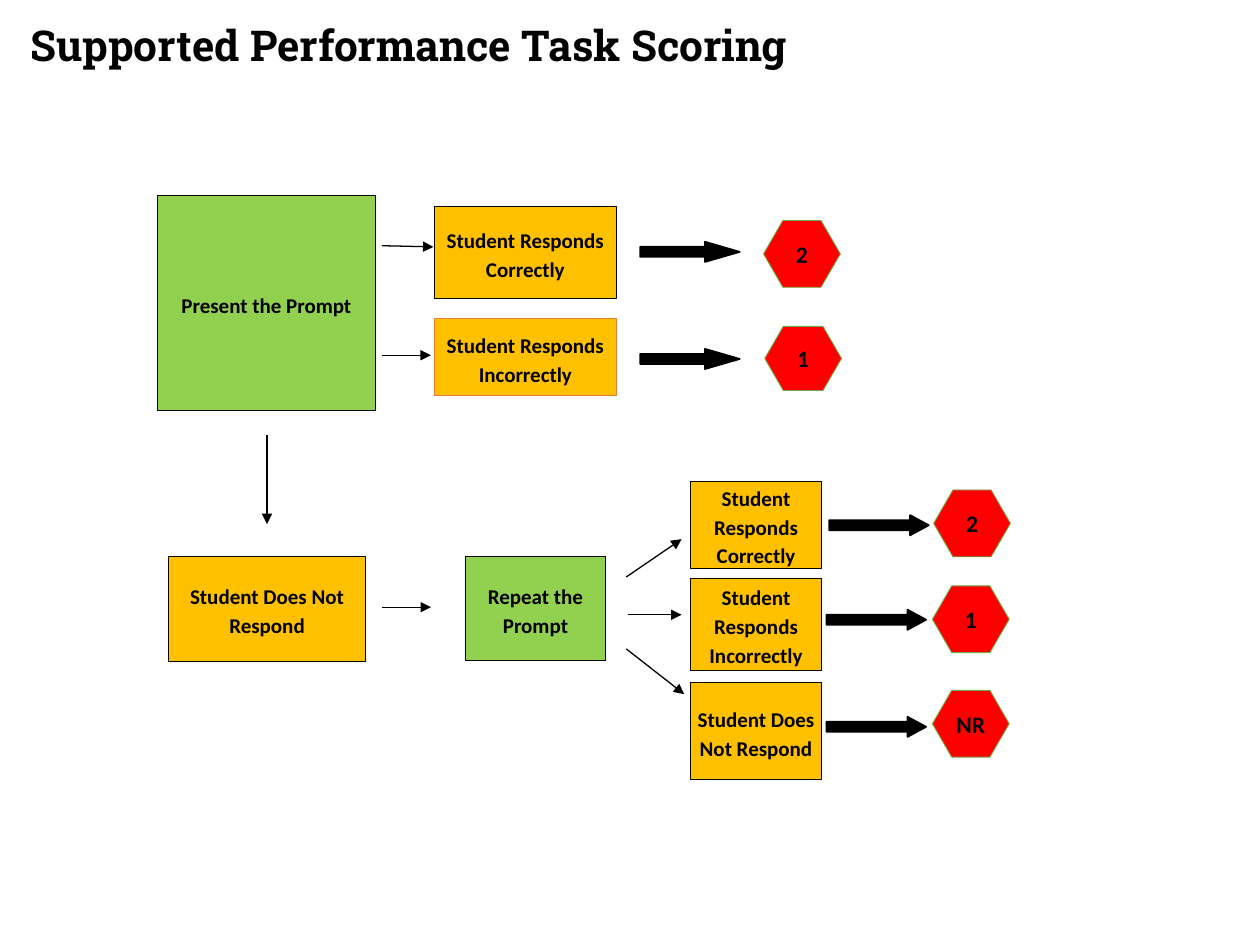
import pptx
import pptx.util
import pptx.dml.color
import pptx.enum.shapes
import pptx.enum.text
import pptx.oxml
import pptx.oxml.ns

Pt = pptx.util.Pt
KIND = pptx.enum.shapes.MSO_SHAPE
ALIGN = pptx.enum.text.PP_ALIGN
MIDDLE = pptx.enum.text.MSO_ANCHOR.MIDDLE
BLACK, GREEN, AMBER, RED = "000000", "92D050", "FFC000", "FF0000"
LEAF, RUST = "70AD47", "ED7D31"


def color(code):
    """Turn a hex string into a colour."""
    return pptx.dml.color.RGBColor.from_string(code)


def write(shape, text, face, size, pad, align, space):
    """Put one bold black paragraph in the middle of a shape."""
    frame = shape.text_frame
    frame.text = text
    frame.word_wrap = True
    frame.vertical_anchor = MIDDLE
    frame.margin_left = frame.margin_right = Pt(pad[0])
    frame.margin_top = frame.margin_bottom = Pt(pad[1])
    para = frame.paragraphs[0]
    para.alignment = align
    para.line_spacing = space
    font = para.runs[0].font
    font.name, font.size, font.bold = face, Pt(size), True
    font.color.rgb = color(BLACK)


def draw(slide, kind, box, fill, edge, width):
    """Add a filled and outlined shape without a shadow."""
    shape = slide.shapes.add_shape(kind, *[Pt(n) for n in box])
    shape.shadow.inherit = False
    shape.fill.solid()
    shape.fill.fore_color.rgb = color(fill)
    shape.line.color.rgb = color(edge)
    shape.line.width = Pt(width)
    return shape


def step(slide, box, text, fill, edge=BLACK):
    """Add a rectangle for one step of the task."""
    shape = draw(slide, KIND.RECTANGLE, box, fill, edge, 0.5)
    write(shape, text, "Calibri", 12, (3.6, 2.16), ALIGN.CENTER, 1.15)


def score(slide, box, text):
    """Add a red hexagon with a score."""
    shape = draw(slide, KIND.HEXAGON, box, RED, LEAF, 0.5)
    shape.adjustments[0] = 0.289
    write(shape, text, "Calibri", 13.5, (0, 0), ALIGN.CENTER, 1)


def block(slide, left, top, head):
    """Add a thick arrow that leads to a score."""
    shape = draw(slide, KIND.RIGHT_ARROW, (left, top, 56.9, 11.5), BLACK, BLACK, 1)
    shape.adjustments[1] = head


def arrow(slide, left, top, ends):
    """Add a thin arrow between two points."""
    x1, y1, x2, y2 = ends
    line = slide.shapes.add_connector(
        pptx.enum.shapes.MSO_CONNECTOR.STRAIGHT,
        Pt(left + x1), Pt(top + y1), Pt(left + x2), Pt(top + y2))
    line.line.color.rgb = color(BLACK)
    line.line.width = Pt(0.75)
    stroke = line.line._get_or_add_ln()
    tip = pptx.oxml.parse_xml(
        '<a:tailEnd %s type="triangle"/>' % pptx.oxml.ns.nsdecls("a"))
    stroke.append(tip)
    line._element.spPr.append(
        pptx.oxml.parse_xml("<a:effectLst %s/>" % pptx.oxml.ns.nsdecls("a")))


def title(slide, box, text):
    """Add the slide title."""
    shape = slide.shapes.add_textbox(*[Pt(n) for n in box])
    write(shape, text, "Roboto Slab", 24.3, (0, 0), ALIGN.LEFT, 0.9)


def prompt(slide, left, top):
    """Place the first prompt and its scored outcomes."""
    step(slide, (left, top, 124.6, 123.1), "Present the Prompt", GREEN)
    rows = [
        ("Student Responds Correctly", 6.5, 52.6, BLACK, 26.6, "2", 346.3, 14.4, 38.2),
        ("Student Responds Incorrectly", 70.6, 43.9, RUST, 87.8, "1", 347, 74.9, 36.7),
    ]
    for text, y, high, edge, mid, mark, x, rise, tall in rows:
        step(slide, (left + 158.4, top + y, 103.7, high), text, AMBER, edge)
        block(slide, left + 275.8, top + mid, 1.725)
        score(slide, (left + x, top + rise, 43.9, tall), mark)
    for ends in [(128.2, 28.8, 157.7, 29.5), (128.2, 91.4, 156.2, 91.4),
                 (62.6, 136.8, 62.6, 187.9)]:
        arrow(slide, left, top, ends)


def repeat(slide, left, top):
    """Place the repeated prompt and its scored outcomes."""
    step(slide, (left, top + 43.2, 112.3, 59.8), "Student Does Not Respond", AMBER)
    step(slide, (left + 169.2, top + 43.2, 80.6, 59), "Repeat the Prompt", GREEN)
    rows = [
        ("Student Responds Correctly", 0, 49.7, 377.3, 19.4, "2", 437, 5),
        ("Student Responds Incorrectly", 55.4, 52.6, 375.8, 73.4, "1", 436.3, 59.8),
        ("Student Does Not Respond", 115.2, 55.4, 375.8, 134.6, "NR", 436.3, 119.5),
    ]
    for text, y, high, start, mid, mark, x, rise in rows:
        step(slide, (left + 298.1, top + y, 74.9, high), text, AMBER)
        block(slide, left + start, top + mid, 0.925)
        score(slide, (left + x, top + rise, 43.9, 38.2), mark)
    for ends in [(121.7, 72, 149.8, 72), (261.4, 54.7, 293, 33.1),
                 (262.1, 76.3, 293, 76.3), (261.4, 95.8, 294.5, 121.7)]:
        arrow(slide, left, top, ends)


def main():
    """Build and save the slide."""
    deck = pptx.Presentation()
    deck.slide_width, deck.slide_height = Pt(720), Pt(540)
    slide = deck.slides.add_slide(deck.slide_layouts[6])
    title(slide, (17.3, 13, 684.7, 28.8), "Supported Performance Task Scoring")
    prompt(slide, 90, 111.6)
    repeat(slide, 96.5, 275)
    deck.save("out.pptx")


if __name__ == "__main__":
    main()
